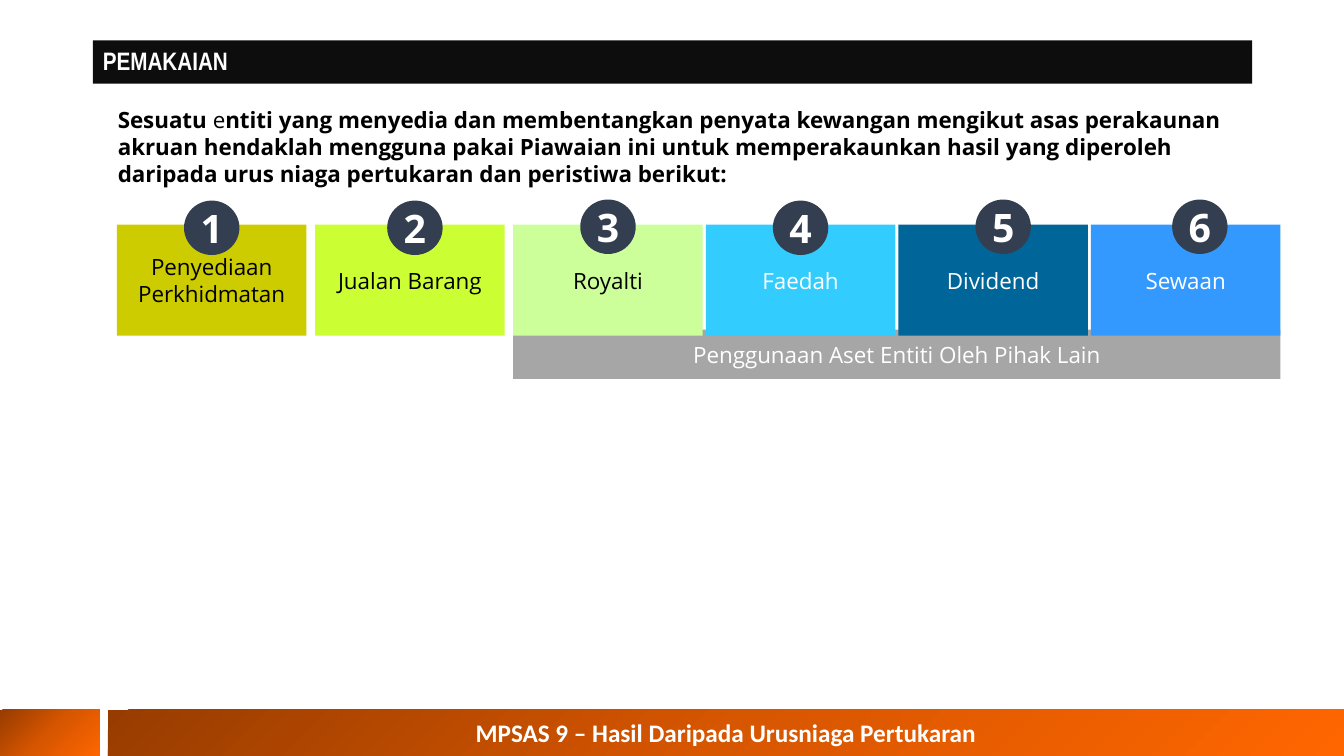
from copy import deepcopy
from dataclasses import dataclass

from pptx import Presentation
from pptx.dml.color import RGBColor
from pptx.enum.shapes import MSO_SHAPE
from pptx.enum.text import MSO_ANCHOR, MSO_AUTO_SIZE, PP_ALIGN
from pptx.util import Inches, Pt


@dataclass(frozen=True)
class Theme:
    black: str = "000000"
    white: str = "FFFFFF"
    title_bar: str = "0D0D0D"
    group_bar: str = "A6A6A6"
    badge: str = "333F50"
    footer: tuple = ("973C00", "D75600", "FF6600")
    body_font: str = "Open Sans"
    title_font: str = "Arial Narrow"
    footer_font: str = "Calibri"
    body_size: int = 16
    heading_size: int = 18
    badge_size: int = 28


THEME = Theme()
SLIDE_WIDTH, SLIDE_HEIGHT = 13.33, 7.5
TILE_WIDTH, TILE_HEIGHT = 1.88, 1.1
BADGE_WIDTH, BADGE_HEIGHT = 0.55, 0.54
SPACED_STEP, GROUPED_STEP = 1.965, 1.91
FIRST_GROUPED = 2

# label, fill, text colour, badge shift from the tile's centre, badge rise above the tile
SOURCES = [
    ("Penyediaan Perkhidmatan", "CCCC00", THEME.black, 0, 0.24),
    ("Jualan Barang", "CCFF33", THEME.black, 0.05, 0.24),
    ("Royalti", "CCFF99", THEME.black, 0, 0.25),
    ("Faedah", "33CCFF", THEME.white, 0, 0.24),
    ("Dividend", "006699", THEME.white, 0.1, 0.25),
    ("Sewaan", "3399FF", THEME.white, 0.14, 0.25),
]
INTRO = [
    ("Sesuatu ", True),
    ("e", False),
    ("ntiti yang menyedia dan membentangkan penyata kewangan mengikut asas perakaunan "
     "akruan hendaklah mengguna pakai Piawaian ini untuk memperakaunkan hasil yang "
     "diperoleh daripada urus niaga pertukaran dan peristiwa berikut:", True),
]


def style_font(font, color, size=THEME.body_size, name=THEME.body_font, bold=False):
    font.name, font.size, font.bold = name, Pt(size), bold
    font.color.rgb = RGBColor.from_string(color)


def fill_solid(shape, color):
    shape.fill.solid()
    shape.fill.fore_color.rgb = RGBColor.from_string(color)


def add_panel(slide, box, fill=None, kind=MSO_SHAPE.RECTANGLE):
    panel = slide.shapes.add_shape(kind, *map(Inches, box))
    panel.shadow.inherit = False
    panel.line.fill.background()
    if fill:
        fill_solid(panel, fill)
    return panel


def write_centered(shape, text, color, **font):
    frame = shape.text_frame
    frame.text = text
    frame.vertical_anchor = MSO_ANCHOR.MIDDLE
    frame.paragraphs[0].alignment = PP_ALIGN.CENTER
    style_font(frame.paragraphs[0].runs[0].font, color, **font)


def fill_gradient(shape, colors):
    """Spread the colours evenly from top left to bottom right."""
    shape.fill.gradient()
    shape.fill.gradient_angle = 315
    stop_list = shape.fill._fill._gradFill.gsLst
    stop_list.insert(1, deepcopy(stop_list[0]))
    for index, (stop, color) in enumerate(zip(shape.fill.gradient_stops, colors)):
        stop.position = index / (len(colors) - 1)
        stop.color.rgb = RGBColor.from_string(color)


def place_title(slide, box):
    title = slide.shapes.title
    title.left, title.top, title.width, title.height = map(Inches, box)
    fill_solid(title, THEME.title_bar)
    frame = title.text_frame
    frame.text = "PEMAKAIAN"
    frame.auto_size = MSO_AUTO_SIZE.NONE
    frame.vertical_anchor = MSO_ANCHOR.MIDDLE
    heading = frame.paragraphs[0]
    heading.alignment, heading.line_spacing = PP_ALIGN.LEFT, 0.9
    style_font(heading.runs[0].font, THEME.white, THEME.heading_size, THEME.title_font, True)


def add_intro(slide, box):
    frame = slide.shapes.add_textbox(*map(Inches, box)).text_frame
    frame.word_wrap = True
    frame.vertical_anchor = MSO_ANCHOR.MIDDLE
    for text, bold in INTRO:
        run = frame.paragraphs[0].add_run()
        run.text = text
        style_font(run.font, THEME.black, bold=bold)


def add_badge(slide, number, box):
    badge = add_panel(slide, box, THEME.badge, MSO_SHAPE.OVAL)
    frame = badge.text_frame
    frame.word_wrap = False
    frame.margin_left = frame.margin_right = Inches(0.04)
    frame.margin_top = frame.margin_bottom = Inches(0.02)
    write_centered(badge, str(number), THEME.white, size=THEME.badge_size, bold=True)


def add_sources(slide, left, top):
    """Draw the numbered tiles; the last four sit closer, over a shared bar."""
    lefts = [left + min(i, FIRST_GROUPED) * SPACED_STEP
             + max(i - FIRST_GROUPED, 0) * GROUPED_STEP for i in range(len(SOURCES))]
    group_left = lefts[FIRST_GROUPED]
    group_width = lefts[-1] + TILE_WIDTH - group_left
    group_bar = add_panel(slide, (group_left, top + 1.04, group_width, 0.49), THEME.group_bar)
    write_centered(group_bar, "Penggunaan Aset Entiti Oleh Pihak Lain", THEME.white)

    for number, (x, source) in enumerate(zip(lefts, SOURCES), 1):
        label, fill, color, shift, rise = source
        tile = add_panel(slide, (x, top, TILE_WIDTH, TILE_HEIGHT), fill)
        write_centered(tile, label, color)
        badge_left = x + (TILE_WIDTH - BADGE_WIDTH) / 2 + shift
        add_badge(slide, number, (badge_left, top - rise, BADGE_WIDTH, BADGE_HEIGHT))


def add_footer(slide, height):
    top, split, gap = SLIDE_HEIGHT - height, 0.99, 0.08
    corner = add_panel(slide, (0, top, split, height))
    banner_left = split + gap
    banner = add_panel(slide, (banner_left, top, SLIDE_WIDTH - banner_left, height))
    for part in (corner, banner):
        fill_gradient(part, THEME.footer)
    write_centered(banner, "MPSAS 9 – Hasil Daripada Urusniaga Pertukaran", THEME.white,
                   size=THEME.heading_size, name=THEME.footer_font, bold=True)


def main():
    deck = Presentation()
    deck.slide_width, deck.slide_height = Inches(SLIDE_WIDTH), Inches(SLIDE_HEIGHT)
    slide = deck.slides.add_slide(deck.slide_layouts[5])
    place_title(slide, (0.92, 0.4, 11.5, 0.43))
    add_intro(slide, (1.07, 1, 11.34, 0.91))
    add_sources(slide, 1.16, 2.23)
    add_footer(slide, 0.46)
    deck.save("out.pptx")


if __name__ == "__main__":
    main()
